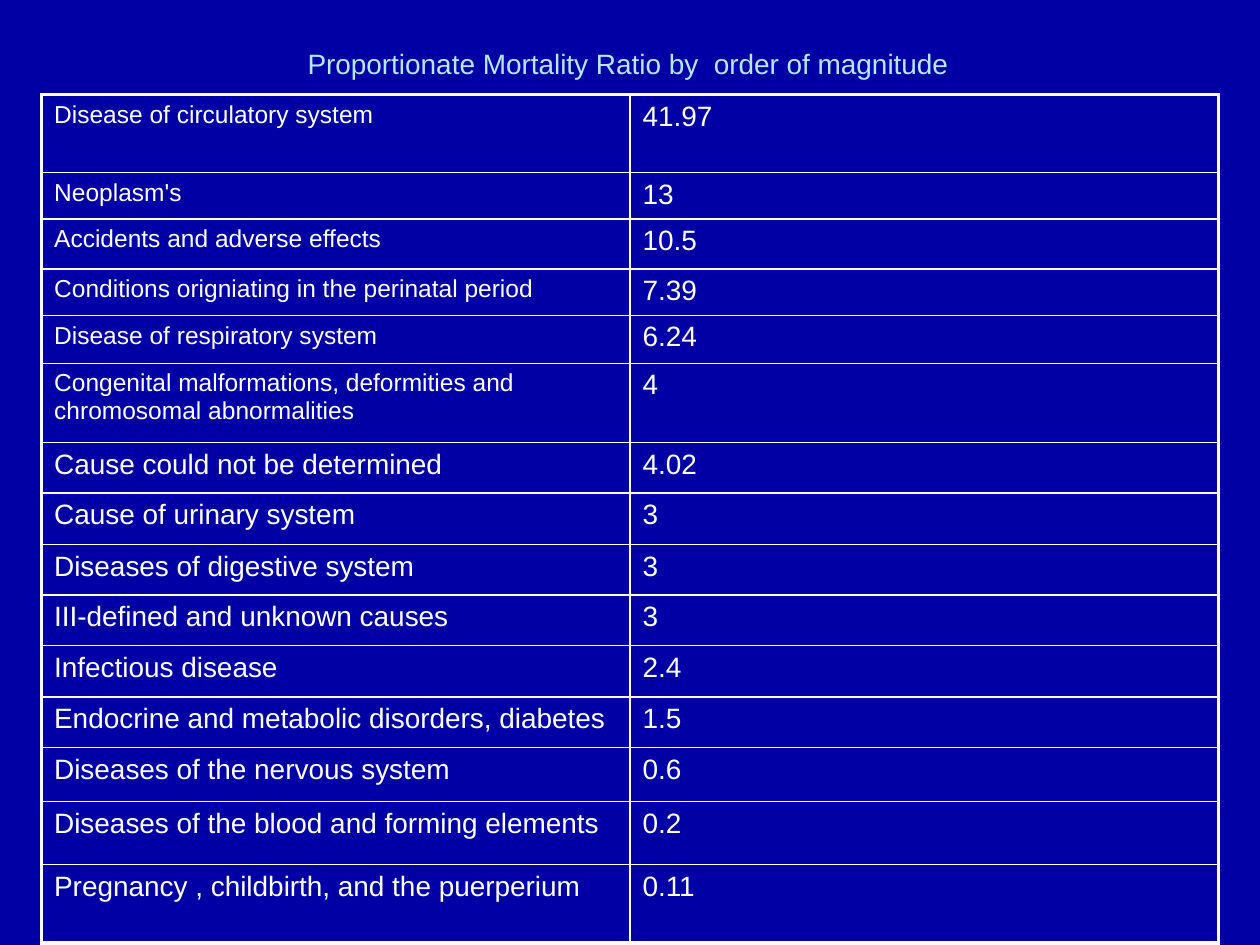
from typing import NamedTuple

from lxml.etree import SubElement
from pptx import Presentation
from pptx.dml.color import RGBColor
from pptx.enum.text import MSO_ANCHOR as Anchor, PP_ALIGN as Align
from pptx.oxml.ns import qn
from pptx.table import _Cell as Cell
from pptx.text.text import TextFrame
from pptx.util import Inches, Pt

COLORS = {"background": "0000A4", "title": "B7E7FF", "body": "FFFFFF"}
FONT = "Arial"
INNER_BORDER, OUTER_BORDER = 1, 2.25


class Cause(NamedTuple):
    label: str
    ratio: str
    height: float
    label_size: int = 16


CAUSES = [
    Cause("Disease of circulatory system", "41.97", 0.62, 14),
    Cause("Neoplasm's", "13", 0.35, 14),
    Cause("Accidents and adverse effects", "10.5", 0.4, 14),
    Cause("Conditions origniating in the perinatal period", "7.39", 0.35, 14),
    Cause("Disease of respiratory system", "6.24", 0.38, 14),
    Cause("Congenital malformations, deformities and chromosomal abnormalities", "4", 0.63, 14),
    Cause("Cause could not be determined", "4.02", 0.4),
    Cause("Cause of urinary system", "3", 0.41),
    Cause("Diseases of digestive system", "3", 0.4),
    Cause("III-defined and unknown causes", "3", 0.4),
    Cause("Infectious disease", "2.4", 0.41),
    Cause("Endocrine and metabolic disorders, diabetes", "1.5", 0.4),
    Cause("Diseases of the nervous system", "0.6", 0.43),
    Cause("Diseases of the blood and forming elements", "0.2", 0.5),
    Cause("Pregnancy , childbirth, and the puerperium", "0.11", 0.62),
]


def write_text(frame: TextFrame, text: str, *, size: int = 16, color: str = "body",
               align: Align = Align.LEFT, anchor: Anchor = Anchor.TOP) -> None:
    frame.word_wrap = True
    frame.vertical_anchor = anchor
    paragraph = frame.paragraphs[0]
    paragraph.alignment = align
    run = paragraph.add_run()
    run.text = text
    run.font.name = FONT
    run.font.size = Pt(size)
    run.font.color.rgb = RGBColor.from_string(COLORS[color])


def draw_borders(cell: Cell, outer_sides: dict[str, bool]) -> None:
    properties = cell._tc.get_or_add_tcPr()
    for position, (side, is_outer) in enumerate(outer_sides.items()):
        width = Pt(OUTER_BORDER if is_outer else INNER_BORDER)
        border = SubElement(properties, qn(f"a:ln{side}"), w=str(width))
        fill = SubElement(border, qn("a:solidFill"))
        SubElement(fill, qn("a:srgbClr"), val=COLORS["body"])
        properties.insert(position, border)


def main() -> None:
    deck = Presentation()
    deck.slide_width, deck.slide_height = Inches(10), Inches(7.5)
    slide = deck.slides.add_slide(deck.slide_layouts[6])
    backdrop = slide.background.fill
    backdrop.solid()
    backdrop.fore_color.rgb = RGBColor.from_string(COLORS["background"])

    title = slide.shapes.add_textbox(Inches(0.33), Inches(0.25), Inches(9.31), Inches(0.5))
    write_text(title.text_frame, "Proportionate Mortality Ratio by  order of magnitude",
               color="title", align=Align.CENTER, anchor=Anchor.MIDDLE)

    total_height = sum(cause.height for cause in CAUSES)
    mortality = slide.shapes.add_table(len(CAUSES), 2, Inches(0.33), Inches(0.75),
                                       Inches(9.34), Inches(total_height)).table
    mortality.first_row = mortality.horz_banding = False
    last_row = len(CAUSES) - 1
    for row, cause in enumerate(CAUSES):
        mortality.rows[row].height = Inches(cause.height)
        entries = [(cause.label, cause.label_size), (cause.ratio, 16)]
        for column, (text, size) in enumerate(entries):
            cell = mortality.cell(row, column)
            cell.fill.background()
            write_text(cell.text_frame, text, size=size)
            draw_borders(cell, {"L": column == 0, "R": column == 1,
                                "T": row == 0, "B": row == last_row})

    deck.save("out.pptx")


if __name__ == "__main__":
    main()
